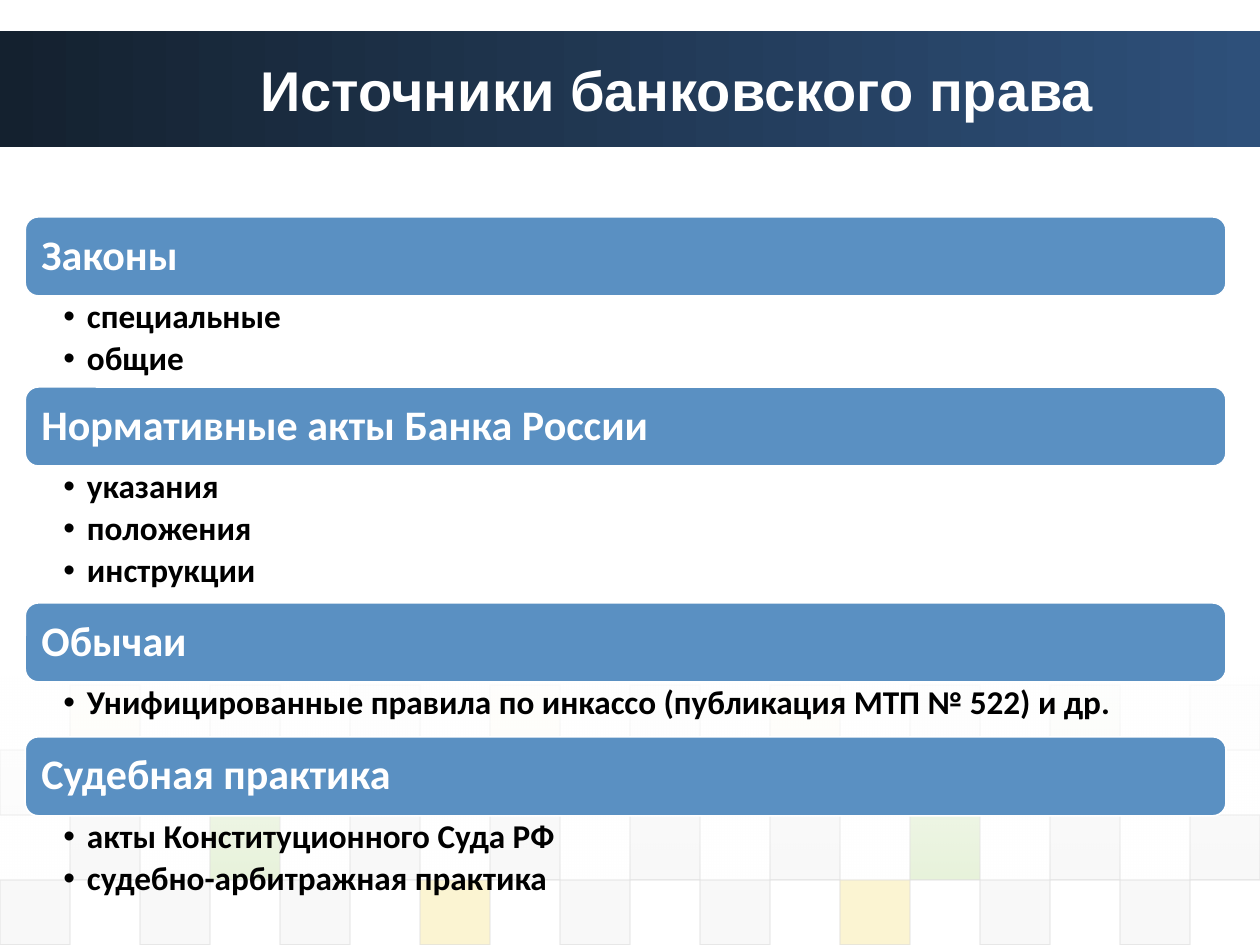
from dataclasses import dataclass

from lxml.etree import SubElement
from pptx import Presentation
from pptx.dml.color import RGBColor
from pptx.enum.shapes import MSO_SHAPE
from pptx.enum.text import MSO_ANCHOR, MSO_AUTO_SIZE, PP_ALIGN
from pptx.oxml.ns import qn
from pptx.util import Pt


@dataclass(frozen=True)
class Theme:
    """Colours, fonts and type sizes of the slide."""

    white: str = "FFFFFF"
    black: str = "000000"
    band_start: str = "14212F"
    band_end: str = "2E507A"
    heading: str = "5A90C2"
    grey: str = "DDDDDD"
    pale: str = "EAEAEA"
    green: str = "8AC246"
    yellow: str = "EFC821"
    title_font: str = "Arial"
    text_font: str = "Calibri"
    title_size: int = 32
    heading_size: int = 24
    list_size: int = 19


THEME = Theme()
TILE_COLORS = {"D": THEME.grey, "E": THEME.pale, "G": THEME.green, "Y": THEME.yellow}
TILE_ROWS = [("YEEYDYEGE", 5), ("DDDDGDDDY", 10), ("DGDDDDGDD", 20), ("DDDYDDYDD", 20)]
TILE_WIDTH, TILE_HEIGHT, TILES_TOP = 40, 37.1, 391.5
SECTION_LEFT, SECTION_WIDTH, SECTIONS_TOP = 14.4, 686.2, 123.9
HEADING_HEIGHT = 45.2
LIST_HEIGHTS = {1: 31.3, 2: 52, 3: 78.2}
SECTIONS = [
    ("Законы", ["специальные", "общие"]),
    ("Нормативные акты Банка России", ["указания", "положения", "инструкции"]),
    ("Обычаи", ["Унифицированные правила по инкассо (публикация МТП № 522) и др."]),
    ("Судебная практика", ["акты Конституционного Суда РФ", "судебно-арбитражная практика"]),
]


def rgb(color):
    """Return the colour object of a hexadecimal string."""
    return RGBColor.from_string(color)


def add_box(slide, kind, left, top, width, height):
    """Add a preset shape without shadow or outline."""
    shape = slide.shapes.add_shape(kind, Pt(left), Pt(top), Pt(width), Pt(height))
    shape.shadow.inherit = False
    shape.line.fill.background()
    return shape


def set_opacity(shape, *percentages):
    """Give the shape's colours, in order, their opacity."""
    colors = shape.element.spPr.iter(qn("a:srgbClr"))
    for color, percentage in zip(colors, percentages):
        SubElement(color, qn("a:alpha")).set("val", str(percentage * 1000))


def fill_gradient(shape, angle, *colors):
    """Fill the shape with a two-colour linear gradient."""
    shape.fill.gradient()
    shape.fill.gradient_angle = angle
    for stop, color in zip(shape.fill.gradient_stops, colors):
        stop.color.rgb = rgb(color)


def set_outline(shape, color, width):
    """Draw a solid outline around the shape."""
    shape.line.color.rgb = rgb(color)
    shape.line.width = Pt(width)


def format_runs(paragraph, font, size, color):
    """Set the bold typeface of every run in the paragraph."""
    for run in paragraph.runs:
        run.font.name = font
        run.font.size = Pt(size)
        run.font.bold = True
        run.font.color.rgb = rgb(color)


def set_margins(text_frame, left, top, right, bottom):
    """Set the inner margins of a wrapped text frame."""
    text_frame.word_wrap = True
    text_frame.auto_size = MSO_AUTO_SIZE.NONE
    text_frame.margin_left, text_frame.margin_top = Pt(left), Pt(top)
    text_frame.margin_right, text_frame.margin_bottom = Pt(right), Pt(bottom)


def place(shape, left, top, width, height):
    """Position a placeholder and bring it to the front."""
    shape.left, shape.top, shape.width, shape.height = Pt(left), Pt(top), Pt(width), Pt(height)
    shape.element.getparent().append(shape.element)


def add_tiles(slide):
    """Draw the chequered tiles and the white fade over them."""
    for row, (letters, opacity) in enumerate(TILE_ROWS):
        for index, letter in enumerate(letters):
            column = 2 * index + (row + 1) % 2
            tile = add_box(slide, MSO_SHAPE.RECTANGLE, column * TILE_WIDTH,
                           TILES_TOP + row * TILE_HEIGHT, TILE_WIDTH, TILE_HEIGHT)
            tile.fill.solid()
            tile.fill.fore_color.rgb = rgb(TILE_COLORS[letter])
            set_outline(tile, THEME.grey, 0.75)
            set_opacity(tile, opacity, 60)
    fade = add_box(slide, MSO_SHAPE.RECTANGLE, 0, 386.6, 720, 116.6)
    fill_gradient(fade, 270, THEME.white, THEME.white)
    set_opacity(fade, 90, 0)


def add_title(slide):
    """Draw the title band and fill the title placeholder."""
    band = add_box(slide, MSO_SHAPE.RECTANGLE, 0, 18, 720, 66)
    fill_gradient(band, 0, THEME.band_start, THEME.band_end)
    title = slide.shapes.title
    place(title, 96, 18, 582, 66)
    title.text_frame.text = "Источники банковского права"
    title.text_frame.vertical_anchor = MSO_ANCHOR.MIDDLE
    paragraph = title.text_frame.paragraphs[0]
    paragraph.alignment = PP_ALIGN.CENTER
    format_runs(paragraph, THEME.title_font, THEME.title_size, THEME.white)


def add_heading(slide, text, top):
    """Add the rounded heading bar of a section."""
    bar = add_box(slide, MSO_SHAPE.ROUNDED_RECTANGLE, SECTION_LEFT, top,
                  SECTION_WIDTH, HEADING_HEIGHT)
    bar.fill.solid()
    bar.fill.fore_color.rgb = rgb(THEME.heading)
    set_outline(bar, THEME.white, 1)
    bar.text_frame.text = text
    bar.text_frame.vertical_anchor = MSO_ANCHOR.MIDDLE
    set_margins(bar.text_frame, 7.2, 7.2, 7.2, 7.2)
    paragraph = bar.text_frame.paragraphs[0]
    paragraph.alignment = PP_ALIGN.LEFT
    paragraph.line_spacing = 0.9
    format_runs(paragraph, THEME.text_font, THEME.heading_size, THEME.white)


def add_bullet(paragraph):
    """Give the paragraph a hanging round bullet."""
    properties = paragraph._p.get_or_add_pPr()
    properties.set("marL", str(Pt(13.5)))
    properties.set("indent", str(-Pt(13.5)))
    SubElement(properties, qn("a:buFont")).set("typeface", THEME.title_font)
    SubElement(properties, qn("a:buChar")).set("char", "•")


def fill_list(placeholder, items, top):
    """Fill a body placeholder with the bulleted items of a section."""
    place(placeholder, SECTION_LEFT, top, SECTION_WIDTH, LIST_HEIGHTS[len(items)])
    text_frame = placeholder.text_frame
    text_frame.text = "\n".join(items)
    text_frame.vertical_anchor = MSO_ANCHOR.TOP
    set_margins(text_frame, 21.8, 2.4, 13.5, 2.4)
    for paragraph in text_frame.paragraphs:
        paragraph.level = 1
        paragraph.line_spacing = 0.9
        paragraph.space_before = Pt(0)
        paragraph.space_after = Pt(3.5)
        add_bullet(paragraph)
        format_runs(paragraph, THEME.text_font, THEME.list_size, THEME.black)


def main():
    """Build the slide and save the presentation."""
    presentation = Presentation()
    presentation.slide_width, presentation.slide_height = Pt(720), Pt(540)
    slide = presentation.slides.add_slide(presentation.slide_layouts.get_by_name("Comparison"))
    add_tiles(slide)
    add_title(slide)
    top = SECTIONS_TOP
    for index, (heading, items) in enumerate(SECTIONS, start=1):
        add_heading(slide, heading, top)
        fill_list(slide.placeholders[index], items, top + HEADING_HEIGHT)
        top += HEADING_HEIGHT + LIST_HEIGHTS[len(items)]
    presentation.save("out.pptx")


if __name__ == "__main__":
    main()
